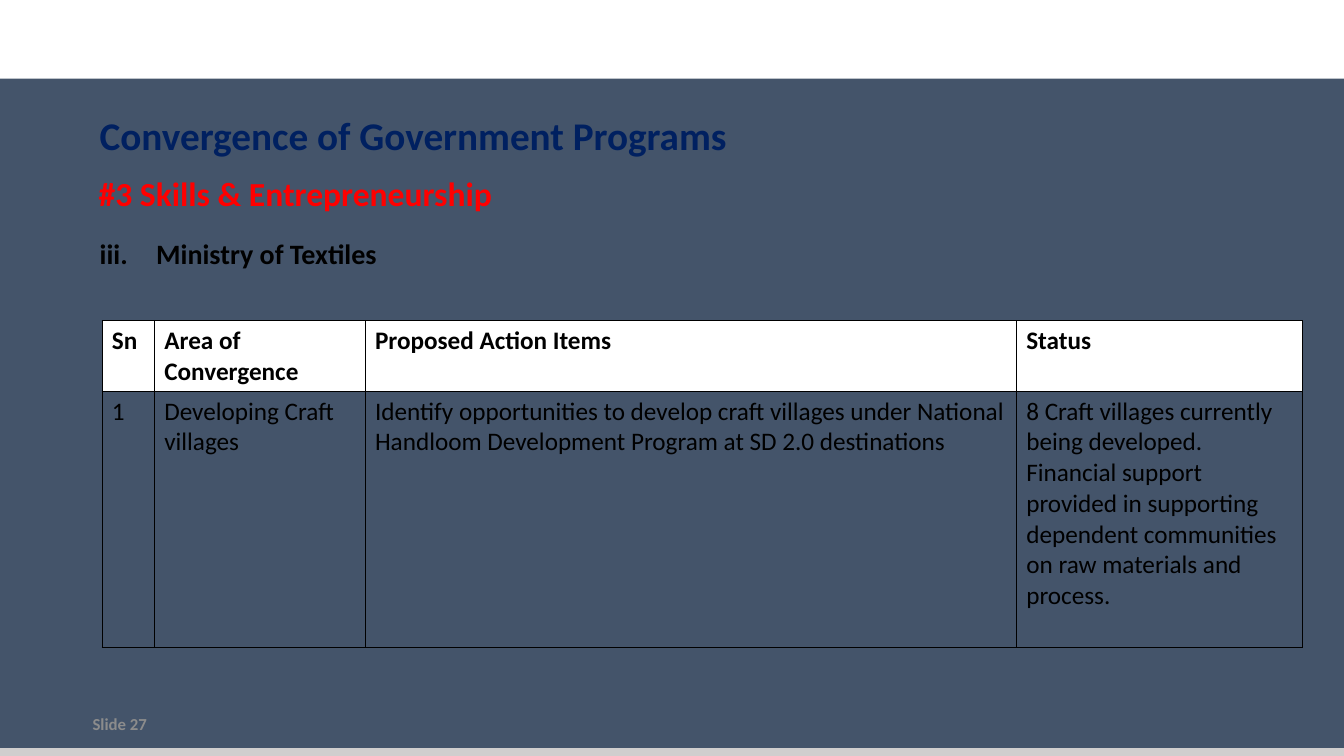
from dataclasses import dataclass

from lxml.etree import SubElement
from pptx import Presentation
from pptx.dml.color import RGBColor
from pptx.enum.shapes import MSO_CONNECTOR, MSO_SHAPE
from pptx.enum.text import MSO_ANCHOR
from pptx.oxml.ns import qn
from pptx.util import Inches, Pt

WIDTH = Inches(13.33)
HEIGHT = Inches(7.5)


@dataclass(frozen=True)
class Theme:
    font: str = "Calibri"
    background: str = "44546A"
    white: str = "FFFFFF"
    footer_line: str = "D0CECE"
    footer_text: str = "8C8C8C"
    title: str = "002060"
    subtitle: str = "FF0000"
    body: str = "000000"
    title_size: float = 28
    subtitle_size: float = 24
    heading_size: float = 20
    table_size: float = 18
    footer_size: float = 12
    footer_line_width: float = 6
    border_width: float = 0.25


THEME = Theme()
COLUMN_SHARES = (3.9, 15.68, 48.46, 21.3)
ROW_SHARES = (9.33, 33.87)
ROWS = (
    ("Sn", "Area of Convergence", "Proposed Action Items", "Status"),
    (
        "1",
        "Developing Craft villages",
        "Identify opportunities to develop craft villages under National "
        "Handloom Development Program at SD 2.0 destinations",
        "8 Craft villages currently being developed. Financial support provided "
        "in supporting dependent communities on raw materials and process.",
    ),
)


def across(percent):
    return round(WIDTH * percent / 100)


def down(percent):
    return round(HEIGHT * percent / 100)


def place(left, top, width, height):
    return across(left), down(top), across(width), down(height)


def color(value):
    return RGBColor.from_string(value)


def style(paragraph, size, text_color, bold=True):
    font = paragraph.font
    font.name = THEME.font
    font.size = Pt(size)
    font.bold = bold
    font.color.rgb = color(text_color)


def number_paragraph(paragraph, scheme, start, indent):
    properties = paragraph._p.get_or_add_pPr()
    properties.set("marL", str(indent))
    properties.set("indent", str(-indent))
    SubElement(properties, qn("a:buFont"), typeface=THEME.font)
    SubElement(properties, qn("a:buAutoNum"), type=scheme, startAt=str(start))


def add_text(slide, text, area, size, text_color, anchor=MSO_ANCHOR.MIDDLE, number=None):
    frame = slide.shapes.add_textbox(*place(*area)).text_frame
    frame.word_wrap = True
    frame.vertical_anchor = anchor
    paragraph = frame.paragraphs[0]
    paragraph.text = text
    if number:
        number_paragraph(paragraph, *number)
    style(paragraph, size, text_color)


def add_band(slide, area, fill):
    band = slide.shapes.add_shape(MSO_SHAPE.RECTANGLE, *place(*area))
    band.shadow.inherit = False
    band.fill.solid()
    band.fill.fore_color.rgb = color(fill)
    band.line.fill.background()


def add_rule(slide, top, line_color, width):
    rule = slide.shapes.add_connector(
        MSO_CONNECTOR.STRAIGHT, 0, down(top), WIDTH, down(top)
    )
    rule.line.color.rgb = color(line_color)
    rule.line.width = Pt(width)
    SubElement(rule._element.spPr, qn("a:effectLst"))


def add_borders(cell):
    properties = cell._tc.get_or_add_tcPr()
    for side in ("L", "R", "T", "B"):
        border = SubElement(properties, qn(f"a:ln{side}"), w=str(Pt(THEME.border_width)))
        fill = SubElement(border, qn("a:solidFill"))
        SubElement(fill, qn("a:srgbClr"), val=THEME.body)


def fill_cell(cell, text, is_header):
    add_borders(cell)
    if is_header:
        cell.fill.solid()
        cell.fill.fore_color.rgb = color(THEME.white)
    else:
        cell.fill.background()
    paragraph = cell.text_frame.paragraphs[0]
    paragraph.text = text
    style(paragraph, THEME.table_size, THEME.body, is_header)


def add_action_table(slide, left, top):
    area = place(left, top, sum(COLUMN_SHARES), sum(ROW_SHARES))
    table = slide.shapes.add_table(len(ROWS), len(COLUMN_SHARES), *area).table
    table.horz_banding = False
    for column, share in zip(table.columns, COLUMN_SHARES):
        column.width = across(share)
    for row, share in zip(table.rows, ROW_SHARES):
        row.height = down(share)
    for row_index, texts in enumerate(ROWS):
        for column_index, text in enumerate(texts):
            fill_cell(table.cell(row_index, column_index), text, row_index == 0)


def main():
    presentation = Presentation()
    presentation.slide_width = WIDTH
    presentation.slide_height = HEIGHT
    slide = presentation.slides.add_slide(presentation.slide_layouts[6])
    slide.background.fill.solid()
    slide.background.fill.fore_color.rgb = color(THEME.background)

    add_band(slide, (0, 0, 100, 10.4), THEME.white)
    add_rule(slide, 99.47, THEME.footer_line, THEME.footer_line_width)
    add_text(slide, "Slide 27", (6.15, 94, 22.5, 3.6),
             THEME.footer_size, THEME.footer_text)
    add_text(slide, "#3 Skills & Entrepreneurship", (6.6, 22, 88.5, 7.2),
             THEME.subtitle_size, THEME.subtitle)
    add_text(slide, "Convergence of Government Programs", (6.68, 13.47, 62.4, 8.67),
             THEME.title_size, THEME.title)
    add_text(slide, "Ministry of Textiles", (6.68, 30.67, 88.5, 7.2),
             THEME.heading_size, THEME.body, MSO_ANCHOR.TOP,
             ("romanLcPeriod", 3, across(4.2)))
    add_action_table(slide, 7.58, 41.87 + 0.53)
    presentation.save("out.pptx")


if __name__ == "__main__":
    main()
